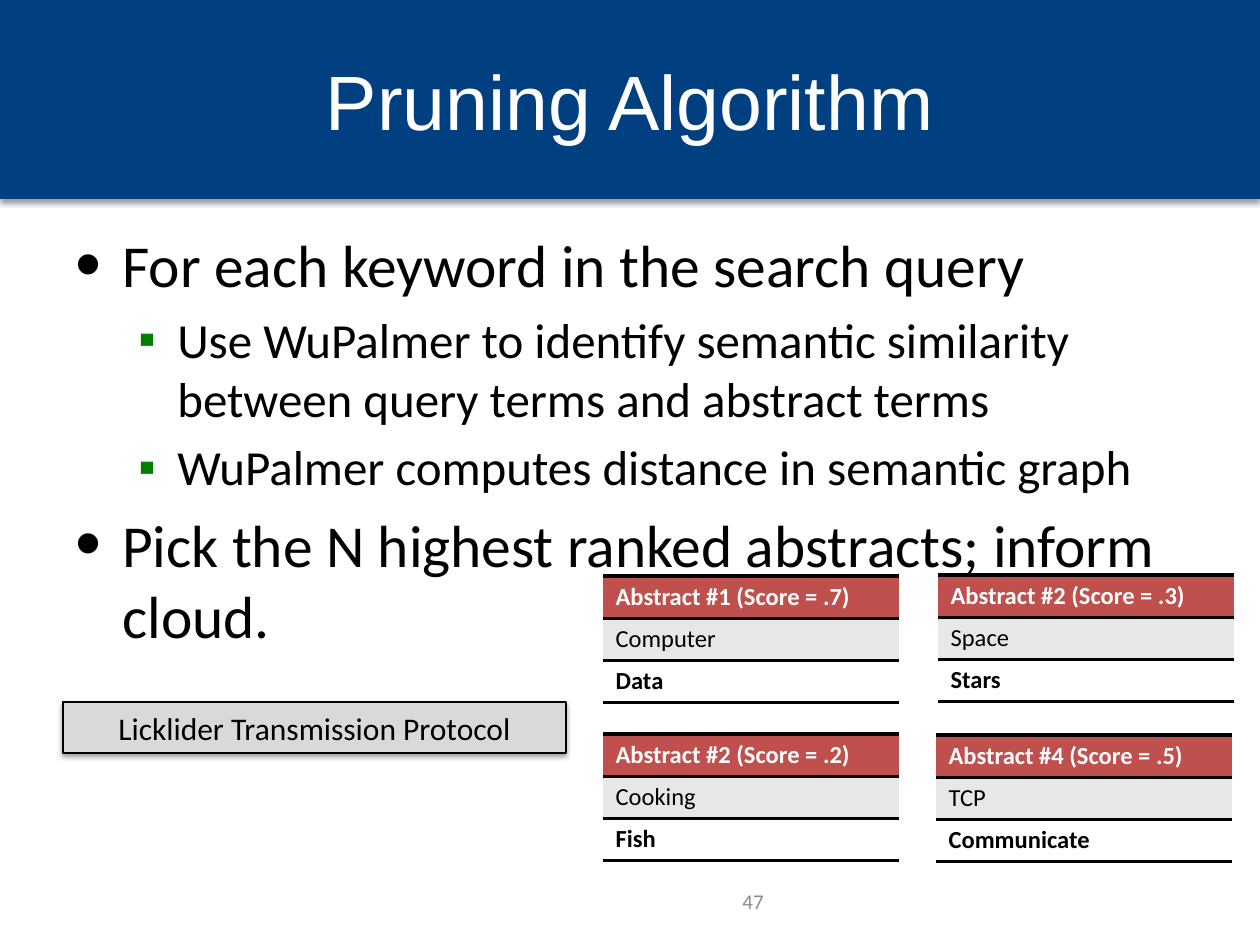
from dataclasses import dataclass

from lxml.etree import SubElement
from pptx import Presentation
from pptx.dml.color import RGBColor
from pptx.enum.shapes import MSO_SHAPE
from pptx.enum.text import MSO_ANCHOR, PP_ALIGN
from pptx.oxml.ns import qn
from pptx.shapes.autoshape import Shape
from pptx.slide import Slide
from pptx.table import _Cell
from pptx.text.text import TextFrame, _Paragraph
from pptx.util import Emu, Pt

NAVY = RGBColor(0x00, 0x40, 0x80)
WHITE = RGBColor(0xFF, 0xFF, 0xFF)
BLACK = RGBColor(0x00, 0x00, 0x00)
GREEN = RGBColor(0x00, 0x80, 0x00)
RED = RGBColor(0xC0, 0x50, 0x4D)
SILVER = RGBColor(0xD9, 0xD9, 0xD9)
PALE = RGBColor(0xE7, 0xE7, 0xE7)
GREY = RGBColor(0x8C, 0x8C, 0x8C)

EMU_PER_PX = 914400 / 126
PLAIN_TABLE_STYLE = "{2D5ABB26-0587-4C30-8999-92F81FD0307C}"
ROW_HEIGHT = 42
TABLE_WIDTH = 296


@dataclass(frozen=True)
class BulletStyle:
    symbol: str
    size: int
    colour: RGBColor
    percent: int
    margin: int
    hanging: int


@dataclass(frozen=True)
class Point:
    level: int
    text: str


@dataclass(frozen=True)
class Abstract:
    left: int
    top: int
    heading: str
    terms: tuple[str, str]


BULLET_STYLES = (
    BulletStyle("•", 34, BLACK, 125, 47, 47),
    BulletStyle("▪", 28, GREEN, 100, 102, 39),
)
POINTS = (
    Point(0, "For each keyword in the search query"),
    Point(1, "Use WuPalmer to identify semantic similarity between query terms and abstract terms"),
    Point(1, "WuPalmer computes distance in semantic graph"),
    Point(0, "Pick the N highest ranked abstracts; inform cloud."),
)
ABSTRACTS = (
    Abstract(603, 576, "Abstract #1 (Score = .7)", ("Computer", "Data")),
    Abstract(603, 734, "Abstract #2 (Score = .2)", ("Cooking", "Fish")),
    Abstract(938, 575, "Abstract #2 (Score = .3)", ("Space", "Stars")),
    Abstract(936, 735, "Abstract #4 (Score = .5)", ("TCP", "Communicate")),
)


def px(length: int) -> Emu:
    return Emu(round(length * EMU_PER_PX))


def style_text(para: _Paragraph, size: int, colour: RGBColor,
               bold: bool = False, name: str = "Calibri") -> None:
    para.font.name = name
    para.font.size = Pt(size)
    para.font.bold = bold
    para.font.color.rgb = colour


def add_text_frame(page: Slide, left: int, top: int, width: int, height: int) -> TextFrame:
    frame = page.shapes.add_textbox(px(left), px(top), px(width), px(height)).text_frame
    frame.word_wrap = True
    return frame


def add_shadowed_box(page: Slide, left: int, top: int, width: int, height: int,
                     fill: RGBColor) -> Shape:
    box = page.shapes.add_shape(MSO_SHAPE.RECTANGLE, px(left), px(top), px(width), px(height))
    box.fill.solid()
    box.fill.fore_color.rgb = fill
    box.line.fill.background()
    box.shadow.inherit = False
    effects = box._element.spPr.find(qn("a:effectLst"))
    shadow = SubElement(effects, qn("a:outerShdw"), blurRad=str(Pt(3.1)), dist=str(Pt(1.6)),
                        dir="5400000", rotWithShape="0")
    colour = SubElement(shadow, qn("a:srgbClr"), val=str(BLACK))
    SubElement(colour, qn("a:alpha"), val="38000")
    return box


def add_bullet(para: _Paragraph, style: BulletStyle) -> None:
    properties = para._p.get_or_add_pPr()
    properties.set("marL", str(px(style.margin)))
    properties.set("indent", str(px(-style.hanging)))
    colour = SubElement(properties, qn("a:buClr"))
    SubElement(colour, qn("a:srgbClr"), val=str(style.colour))
    SubElement(properties, qn("a:buSzPct"), val=str(style.percent * 1000))
    SubElement(properties, qn("a:buFont"), typeface="Arial")
    SubElement(properties, qn("a:buChar"), char=style.symbol)


def add_points(page: Slide) -> None:
    frame = add_text_frame(page, 63, 222, 1134, 624)
    for index, point in enumerate(POINTS):
        para = frame.paragraphs[0] if index == 0 else frame.add_paragraph()
        style = BULLET_STYLES[point.level]
        para.text = point.text
        para.level = point.level
        if index:
            para.space_before = Pt(style.size * 0.2)
        add_bullet(para, style)
        style_text(para, style.size, BLACK)


def add_rule(cell: _Cell, edge: str) -> None:
    properties = cell._tc.get_or_add_tcPr()
    line = SubElement(properties, qn(f"a:{edge}"), w=str(Pt(2)))
    fill = SubElement(line, qn("a:solidFill"))
    SubElement(fill, qn("a:srgbClr"), val=str(BLACK))


def add_abstract(page: Slide, abstract: Abstract) -> None:
    rows = (
        (abstract.heading, RED, WHITE, True, ("lnT", "lnB")),
        (abstract.terms[0], PALE, BLACK, False, ("lnT",)),
        (abstract.terms[1], WHITE, BLACK, True, ("lnB",)),
    )
    table = page.shapes.add_table(len(rows), 1, px(abstract.left), px(abstract.top),
                                  px(TABLE_WIDTH), px(ROW_HEIGHT * len(rows))).table
    table._tbl.tblPr.find(qn("a:tableStyleId")).text = PLAIN_TABLE_STYLE
    for index, (text, fill, colour, bold, edges) in enumerate(rows):
        cell = table.cell(index, 0)
        for edge in edges:
            add_rule(cell, edge)
        cell.fill.solid()
        cell.fill.fore_color.rgb = fill
        cell.text = text
        style_text(cell.text_frame.paragraphs[0], 14, colour, bold)


def add_title(page: Slide) -> None:
    banner = add_shadowed_box(page, 0, 0, 1260, 199, NAVY)
    title = page.shapes.title
    title._element.addprevious(banner._element)
    title.left, title.top, title.width, title.height = px(63), px(21), px(1134), px(158)
    title.text_frame.text = "Pruning Algorithm"
    title.text_frame.vertical_anchor = MSO_ANCHOR.MIDDLE
    para = title.text_frame.paragraphs[0]
    para.alignment = PP_ALIGN.CENTER
    style_text(para, 44, WHITE, name="Arial")


def add_page_number(page: Slide) -> None:
    frame = add_text_frame(page, 483, 876, 293, 50)
    frame.vertical_anchor = MSO_ANCHOR.MIDDLE
    frame.text = "47"
    para = frame.paragraphs[0]
    para.alignment = PP_ALIGN.RIGHT
    style_text(para, 12, GREY)


def add_query(page: Slide) -> None:
    box = add_shadowed_box(page, 63, 702, 503, 51, SILVER)
    box.line.color.rgb = BLACK
    box.line.width = Pt(0.75)
    box.text_frame.text = "Licklider Transmission Protocol"
    box.text_frame.vertical_anchor = MSO_ANCHOR.MIDDLE
    para = box.text_frame.paragraphs[0]
    para.alignment = PP_ALIGN.CENTER
    style_text(para, 18, BLACK)


def main() -> None:
    deck = Presentation()
    deck.slide_width, deck.slide_height = px(1260), px(945)
    page = deck.slides.add_slide(deck.slide_layouts[5])
    add_title(page)
    add_points(page)
    add_page_number(page)
    add_query(page)
    for abstract in ABSTRACTS:
        add_abstract(page, abstract)
    deck.save("out.pptx")


if __name__ == "__main__":
    main()
